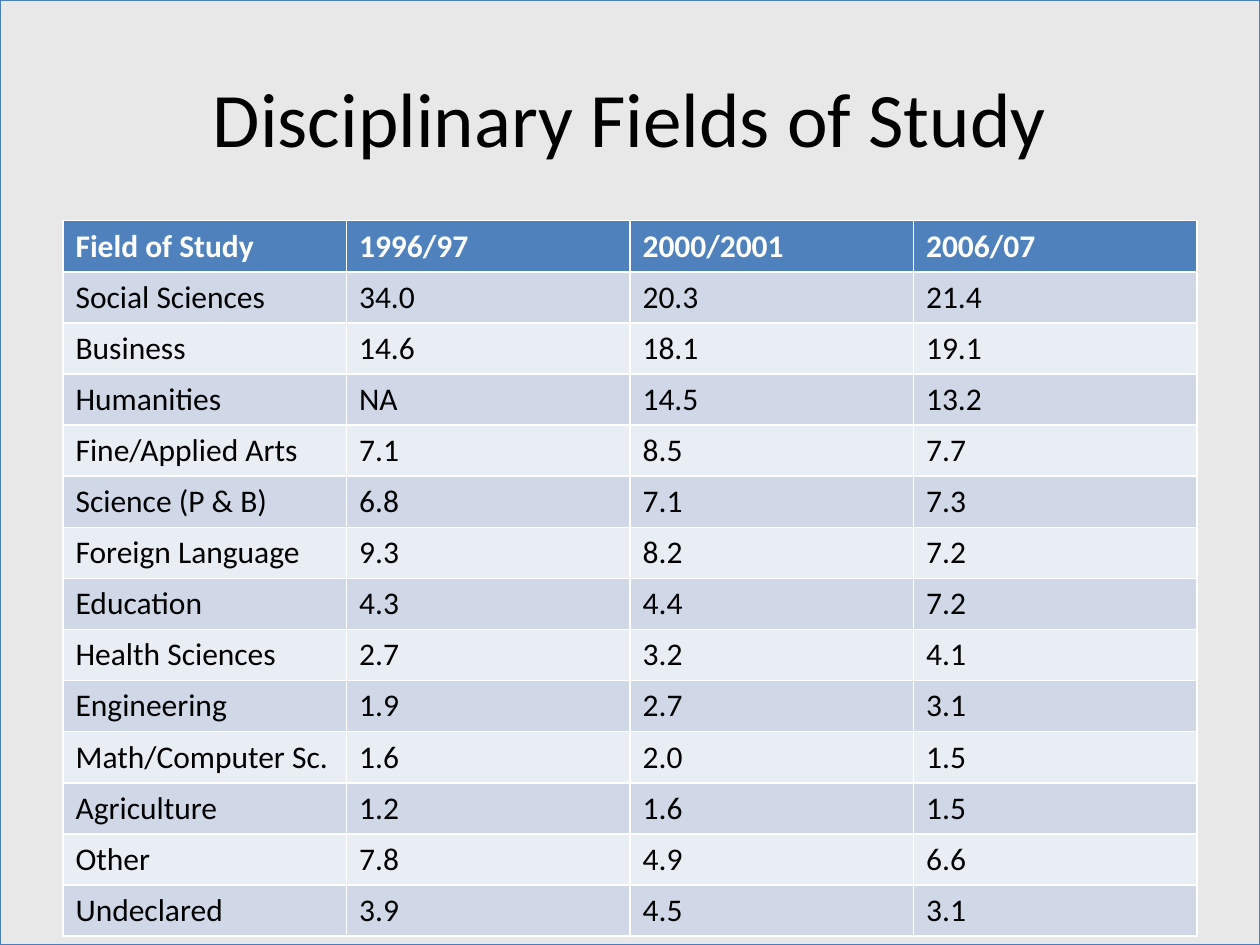
"""Build the slide "Disciplinary Fields of Study" with its table of percentages."""
from dataclasses import dataclass

from pptx import Presentation
from pptx.dml.color import RGBColor
from pptx.enum.shapes import MSO_SHAPE
from pptx.enum.text import MSO_ANCHOR, PP_ALIGN
from pptx.util import Cm, Pt


@dataclass(frozen=True)
class Theme:
    font: str = "Calibri"
    title_size: Pt = Pt(44)
    table_size: Pt = Pt(18)
    text: RGBColor = RGBColor.from_string("000000")
    header_text: RGBColor = RGBColor.from_string("FFFFFF")
    header_fill: RGBColor = RGBColor.from_string("4F81BD")
    odd_fill: RGBColor = RGBColor.from_string("D0D8E8")
    even_fill: RGBColor = RGBColor.from_string("E9EDF4")
    backdrop: RGBColor = RGBColor.from_string("E8E8E8")
    backdrop_line: RGBColor = RGBColor.from_string("4B7EBC")


def style_paragraph(paragraph, size, color, bold=False):
    paragraph.font.name = theme.font
    paragraph.font.size = size
    paragraph.font.bold = bold
    paragraph.font.color.rgb = color


theme = Theme()
rows = [
    ("Field of Study", "1996/97", "2000/2001", "2006/07"),
    ("Social Sciences", "34.0", "20.3", "21.4"),
    ("Business", "14.6", "18.1", "19.1"),
    ("Humanities", "NA", "14.5", "13.2"),
    ("Fine/Applied Arts", "7.1", "8.5", "7.7"),
    ("Science (P & B)", "6.8", "7.1", "7.3"),
    ("Foreign Language", "9.3", "8.2", "7.2"),
    ("Education", "4.3", "4.4", "7.2"),
    ("Health Sciences", "2.7", "3.2", "4.1"),
    ("Engineering", "1.9", "2.7", "3.1"),
    ("Math/Computer Sc.", "1.6", "2.0", "1.5"),
    ("Agriculture", "1.2", "1.6", "1.5"),
    ("Other", "7.8", "4.9", "6.6"),
    ("Undeclared", "3.9", "4.5", "3.1"),
]

presentation = Presentation()
presentation.slide_width = Cm(25.4)
presentation.slide_height = Cm(19.05)
slide = presentation.slides.add_slide(presentation.slide_layouts[5])

title = slide.shapes.title
title.left, title.top, title.width, title.height = Cm(1.27), Cm(0.76), Cm(22.86), Cm(3.18)
title.text_frame.text = "Disciplinary Fields of Study"
title.text_frame.vertical_anchor = MSO_ANCHOR.MIDDLE
title_paragraph = title.text_frame.paragraphs[0]
title_paragraph.alignment = PP_ALIGN.CENTER
style_paragraph(title_paragraph, theme.title_size, theme.text)

backdrop = slide.shapes.add_shape(
    MSO_SHAPE.RECTANGLE, 0, 0, presentation.slide_width, presentation.slide_height
)
backdrop.shadow.inherit = False
backdrop.fill.solid()
backdrop.fill.fore_color.rgb = theme.backdrop
backdrop.line.color.rgb = theme.backdrop_line
backdrop.line.width = Pt(0.75)
title.element.addprevious(backdrop.element)

row_height = Cm(1.03)
table = slide.shapes.add_table(
    len(rows), len(rows[0]), Cm(1.27), Cm(4.45), Cm(22.86), row_height * len(rows)
).table

for row_index, values in enumerate(rows):
    is_header = row_index == 0
    band_fill = theme.odd_fill if row_index % 2 else theme.even_fill
    table.rows[row_index].height = row_height
    for column_index, value in enumerate(values):
        cell = table.cell(row_index, column_index)
        cell.text = value
        cell.fill.solid()
        cell.fill.fore_color.rgb = theme.header_fill if is_header else band_fill
        style_paragraph(
            cell.text_frame.paragraphs[0],
            theme.table_size,
            theme.header_text if is_header else theme.text,
            bold=is_header,
        )

presentation.save("out.pptx")
